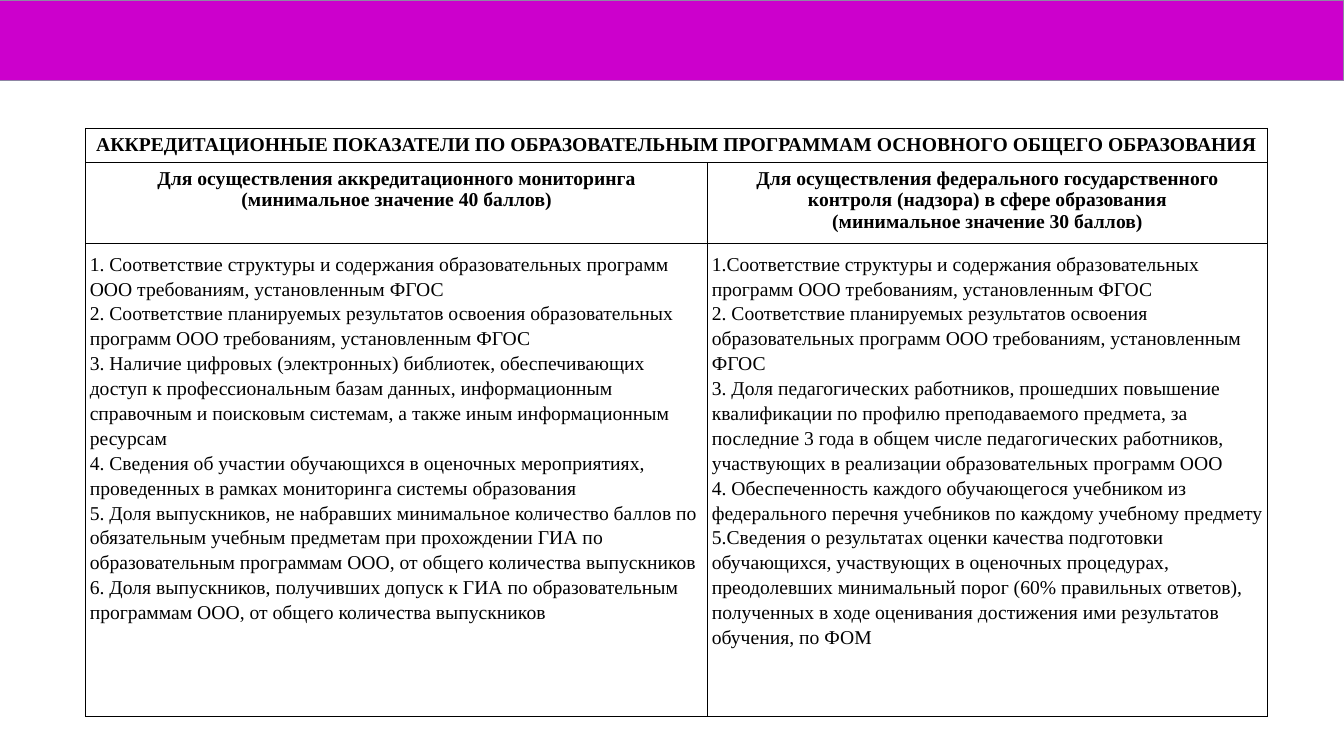
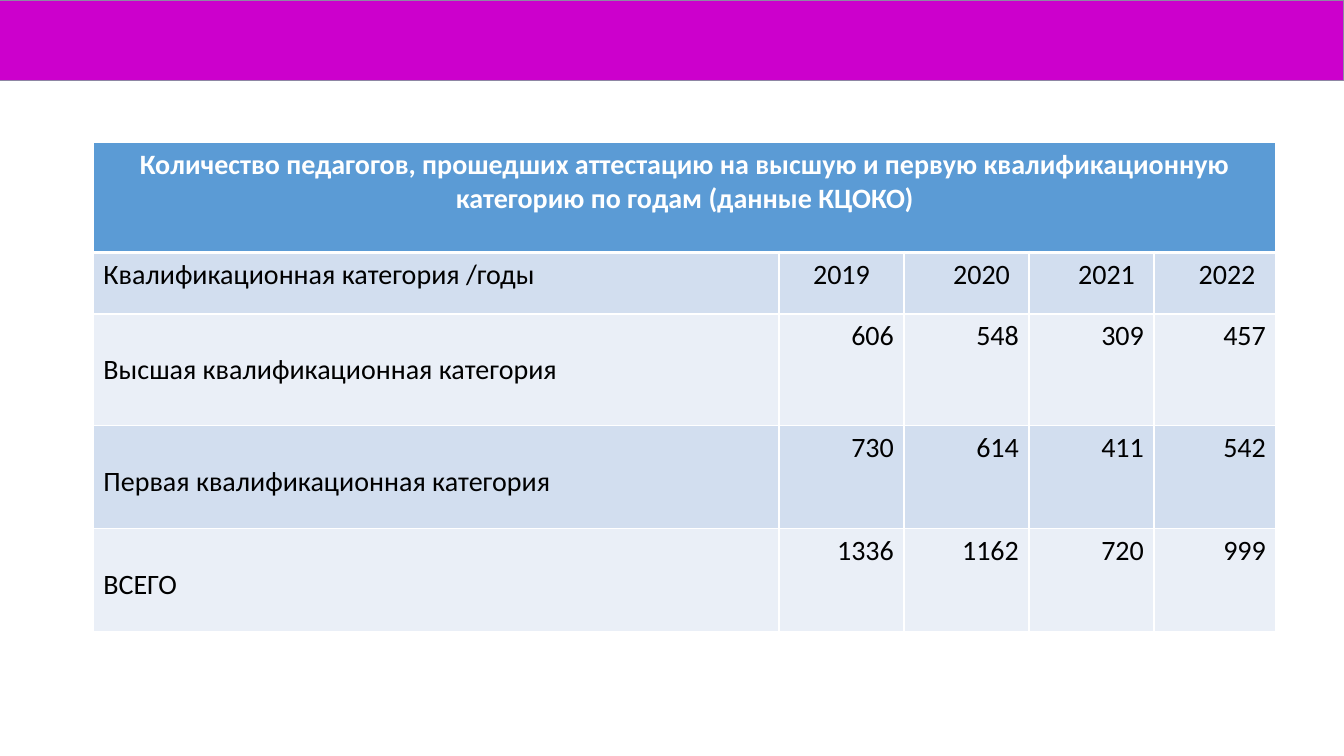
from lxml.etree import SubElement
from pptx import Presentation
from pptx.dml.color import RGBColor
from pptx.enum.shapes import MSO_SHAPE as Shape
from pptx.enum.text import PP_ALIGN as Align
from pptx.oxml.ns import qn
from pptx.util import Inches, Pt

WIDTH, HEIGHT = Inches(13.33), Inches(7.5)

BLACK = RGBColor(0x00, 0x00, 0x00)
WHITE = RGBColor(0xFF, 0xFF, 0xFF)
MAGENTA = RGBColor(0xCC, 0x00, 0xCC)
BAND_LINE = RGBColor(0x8E, 0x87, 0xA3)
HEADER_BLUE = RGBColor(0x5B, 0x9B, 0xD5)
STRIPES = RGBColor(0xD2, 0xDE, 0xEF), RGBColor(0xEA, 0xEF, 0xF7)

# Text formats
SERIF = dict(name="Times New Roman", size=Pt(14), bold=False, color=BLACK)
SERIF_BOLD = {**SERIF, "bold": True}
SANS = dict(name="Calibri", size=Pt(20), bold=False, color=BLACK)
SANS_TITLE = {**SANS, "bold": True, "color": WHITE}


# The slide is a grid of 100 columns by 100 rows
def cols(n):
    return round(WIDTH * n / 100)


def rows(n):
    return round(HEIGHT * n / 100)


# Cell insets in grid units
BODY_INSETS = dict(margin_left=cols(0.3), margin_right=cols(0.3),
                   margin_top=rows(0.93), margin_bottom=rows(0.93))
TITLE_INSETS = dict(margin_left=cols(0.3), margin_right=cols(0.3))
LABEL_INSETS = dict(margin_top=rows(5.2))

INDICATORS_TITLE = ("АККРЕДИТАЦИОННЫЕ ПОКАЗАТЕЛИ ПО ОБРАЗОВАТЕЛЬНЫМ ПРОГРАММАМ "
                    "ОСНОВНОГО ОБЩЕГО ОБРАЗОВАНИЯ")
INDICATORS = [
    (["Для осуществления аккредитационного мониторинга",
      "(минимальное значение 40 баллов)"],
     ["1. Соответствие структуры и содержания образовательных программ ООО "
      "требованиям, установленным ФГОС",
      "2. Соответствие планируемых результатов освоения образовательных программ "
      "ООО требованиям, установленным ФГОС",
      "3. Наличие цифровых (электронных) библиотек, обеспечивающих доступ к "
      "профессиональным базам данных, информационным справочным и поисковым "
      "системам, а также иным информационным ресурсам",
      "4. Сведения об участии обучающихся в оценочных мероприятиях, проведенных "
      "в рамках мониторинга системы образования",
      "5. Доля выпускников, не набравших минимальное количество баллов по "
      "обязательным учебным предметам при прохождении ГИА по образовательным "
      "программам ООО, от общего количества выпускников",
      "6. Доля выпускников, получивших допуск к ГИА по образовательным "
      "программам ООО, от общего количества выпускников"]),
    (["Для осуществления федерального государственного контроля (надзора) "
      "в сфере образования",
      "(минимальное значение 30 баллов)"],
     ["1.Соответствие структуры и содержания образовательных программ ООО "
      "требованиям, установленным ФГОС",
      "2. Соответствие планируемых результатов освоения образовательных программ "
      "ООО требованиям, установленным ФГОС",
      "3. Доля педагогических работников, прошедших повышение квалификации по "
      "профилю преподаваемого предмета, за последние 3 года в общем числе "
      "педагогических работников, участвующих в реализации образовательных "
      "программ ООО",
      "4. Обеспеченность каждого обучающегося учебником из федерального перечня "
      "учебников по каждому учебному предмету",
      "5.Сведения о результатах оценки качества подготовки обучающихся, "
      "участвующих в оценочных процедурах, преодолевших минимальный порог "
      "(60% правильных ответов), полученных в ходе оценивания достижения ими "
      "результатов обучения, по ФОМ"]),
]

TEACHERS_TITLE = ("Количество педагогов, прошедших аттестацию на высшую и первую "
                  "квалификационную категорию по годам (данные КЦОКО)")
YEARS_LABEL = "Квалификационная категория /годы"
YEARS = ["2019", "2020", "2021", "2022"]
YEAR_LEFT = [0.75, 3, 3, 2.55]
TEACHERS = [
    ("Высшая квалификационная категория", [606, 548, 309, 457]),
    ("Первая квалификационная категория", [730, 614, 411, 542]),
    ("ВСЕГО", [1336, 1162, 720, 999]),
]


def add_band_slide(prs):
    """Blank slide with the coloured band across its top."""
    s = prs.slides.add_slide(prs.slide_layouts[6])
    band = s.shapes.add_shape(Shape.RECTANGLE, 0, 0, cols(100), rows(10.67))
    band.shadow.inherit = False
    band.fill.solid()
    band.fill.fore_color.rgb = MAGENTA
    band.line.color.rgb = BAND_LINE
    band.line.width = Pt(0.75)
    return s


def set_borders(cell, color, top=1, bottom=1):
    tc_pr = cell._tc.get_or_add_tcPr()
    for side, width in dict(L=1, R=1, T=top, B=bottom).items():
        line = SubElement(tc_pr, qn(f"a:ln{side}"), w=str(Pt(width)))
        fill = SubElement(line, qn("a:solidFill"))
        SubElement(fill, qn("a:srgbClr"), val=str(color))


def add_grid_table(s, box, col_shares, row_shares):
    """Plain table filling the box, with its title row merged."""
    left, top, width, height = box
    table = s.shapes.add_table(len(row_shares), len(col_shares), cols(left),
                               rows(top), cols(width), rows(height)).table
    table.first_row = table.horz_banding = False
    for column, share in zip(table.columns, col_shares):
        column.width = round(cols(width) * share / sum(col_shares))
    for row, share in zip(table.rows, row_shares):
        row.height = round(rows(height) * share / sum(row_shares))
    table.cell(0, 0).merge(table.cell(0, len(col_shares) - 1))
    return table


def write(cell, lines, font, align=Align.LEFT, spacing=None, insets=None):
    for name, value in (insets or {}).items():
        setattr(cell, name, value)
    tf = cell.text_frame
    for i, line in enumerate(lines):
        p = tf.add_paragraph() if i else tf.paragraphs[0]
        p.alignment = align
        if spacing:
            p.line_spacing = spacing
        r = p.add_run()
        r.text = line
        for name, value in font.items():
            if name == "color":
                r.font.color.rgb = value
            else:
                setattr(r.font, name, value)


def add_indicators(s, box):
    """Two columns of accreditation indicators."""
    table = add_grid_table(s, box, [6.17, 5.55], [0.34, 0.8, 4.69])
    for cell in table.iter_cells():
        set_borders(cell, BLACK)
        cell.fill.background()
    write(table.cell(0, 0), [INDICATORS_TITLE], SERIF_BOLD, Align.CENTER,
          insets=TITLE_INSETS)
    for c, (heading, items) in enumerate(INDICATORS):
        write(table.cell(1, c), heading, SERIF_BOLD, Align.CENTER)
        write(table.cell(2, c), items, SERIF, spacing=1.15, insets=BODY_INSETS)


def add_teachers(s, box):
    """Number of certified teachers by category and year."""
    table = add_grid_table(s, box, [6.8, 1.24, 1.24, 1.24, 1.21],
                           [1.09, 0.61, 1.11, 1.02, 1.02])
    for r, row in enumerate(table.rows):
        for cell in row.cells:
            set_borders(cell, WHITE, top=3 if r == 1 else 1,
                        bottom=3 if r == 0 else 1)
            cell.fill.solid()
            cell.fill.fore_color.rgb = STRIPES[(r - 1) % 2] if r else HEADER_BLUE
    write(table.cell(0, 0), [TEACHERS_TITLE], SANS_TITLE, Align.CENTER)
    # Years
    write(table.cell(1, 0), [YEARS_LABEL], SANS)
    for c, (year, left) in enumerate(zip(YEARS, YEAR_LEFT), 1):
        write(table.cell(1, c), [year], SANS, Align.CENTER,
              insets=dict(margin_left=cols(left)))
    # Categories
    for r, (label, counts) in enumerate(TEACHERS, 2):
        write(table.cell(r, 0), [label], SANS, insets=LABEL_INSETS)
        for c, count in enumerate(counts, 1):
            write(table.cell(r, c), [str(count)], SANS, Align.RIGHT)


def main():
    prs = Presentation()
    prs.slide_width, prs.slide_height = WIDTH, HEIGHT
    add_indicators(add_band_slide(prs), (6.38, 17, 87.92, 77.8))
    add_teachers(add_band_slide(prs), (6.95, 18.9, 88, 64.6))
    prs.save("out.pptx")


if __name__ == "__main__":
    main()
